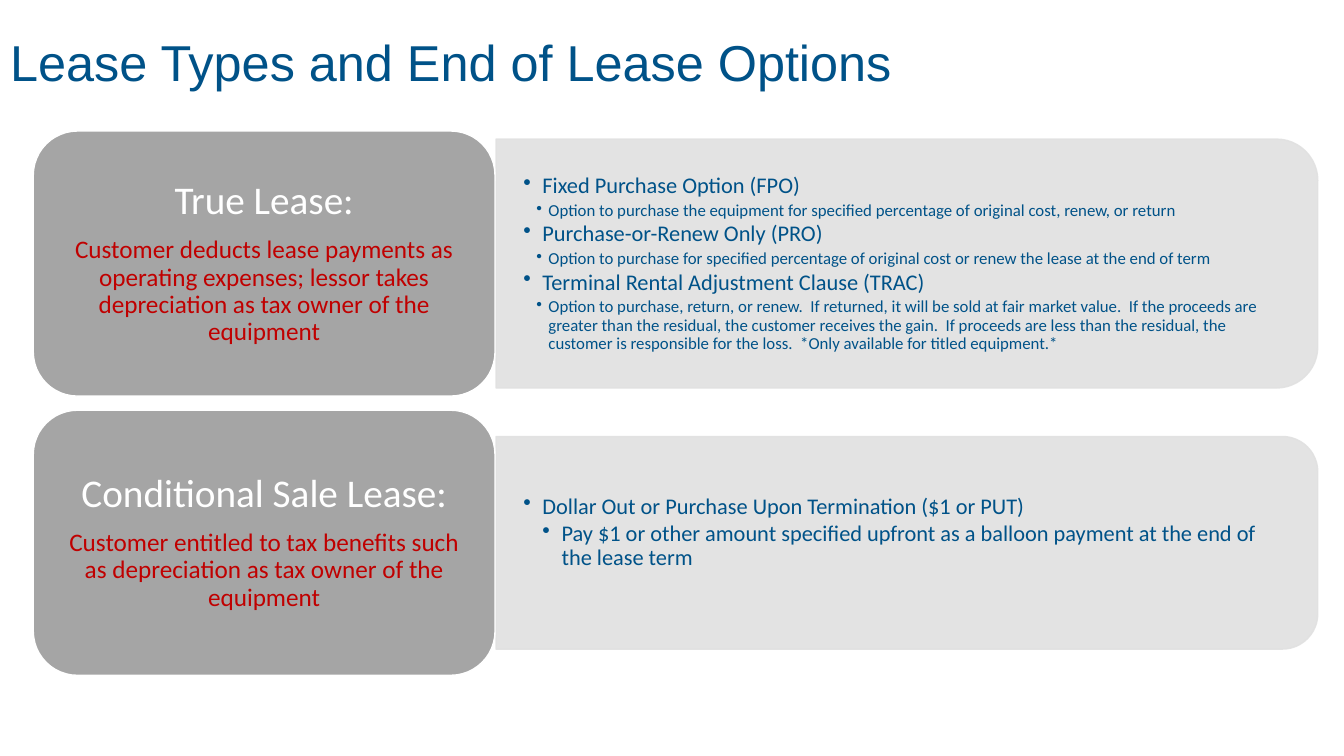
from pptx import Presentation
from pptx.dml.color import RGBColor
from pptx.enum.shapes import MSO_SHAPE
from pptx.enum.text import MSO_ANCHOR, MSO_AUTO_SIZE, PP_ALIGN
from pptx.oxml.ns import qn
from pptx.util import Inches, Pt
from lxml.etree import SubElement

NAVY, RED, WHITE = "005288", "C00000", "FFFFFF"
CARD_GRAY, PANEL_GRAY = "A5A5A5", "E1E1E1"
CARD_LEFT, CARD_WIDTH, CARD_HEIGHT = 0.33, 4.58, 2.63
PANEL_LEFT, PANEL_WIDTH = 4.92, 8.15

LEASES = [
    {"name": "True Lease:",
     "summary": "Customer deducts lease payments as operating expenses; lessor takes "
                "depreciation as tax owner of the equipment",
     "card_top": 1.3, "panel_top": 1.38, "panel_height": 2.47, "bottom_inset": 0.14,
     # text, level, size, indent, hanging
     "options": [
         ("Fixed Purchase Option (FPO)", 1, 16, 0.19, 0.19),
         ("Option to purchase the equipment for specified percentage of original cost, "
          "renew, or return", 2, 12, 0.25, 0.12),
         ("Purchase-or-Renew Only (PRO)", 1, 16, 0.19, 0.19),
         ("Option to purchase for specified percentage of original cost or renew the lease "
          "at the end of term", 2, 12, 0.25, 0.12),
         ("Terminal Rental Adjustment Clause (TRAC)", 1, 16, 0.19, 0.19),
         ("Option to purchase, return, or renew.  If returned, it will be sold at fair market "
          "value.  If the proceeds are greater than the residual, the customer receives the "
          "gain.  If proceeds are less than the residual, the customer is responsible for the "
          "loss.  *Only available for titled equipment.*", 2, 12, 0.25, 0.12),
     ]},
    {"name": "Conditional Sale Lease:",
     "summary": "Customer entitled to tax benefits such as depreciation as tax owner "
                "of the equipment",
     "card_top": 4.07, "panel_top": 4.33, "panel_height": 2.11, "bottom_inset": 0.34,
     "options": [
         ("Dollar Out or Purchase Upon Termination ($1 or PUT)", 1, 16, 0.19, 0.19),
         ("Pay $1 or other amount specified upfront as a balloon payment at the end of the "
          "lease term", 2, 16, 0.38, 0.19),
     ]},
]


def paint(shape, fill, line):
    shape.shadow.inherit = False
    shape.fill.solid()
    shape.fill.fore_color.rgb = RGBColor.from_string(fill)
    shape.line.color.rgb = RGBColor.from_string(line)
    shape.line.width = Pt(1)


def write(frame, text, size, color, font="Calibri", align=PP_ALIGN.LEFT,
          after=0, level=0, indent=0, hanging=0):
    """Add a paragraph to the frame; a hanging indent gives it a bullet."""
    first = frame.paragraphs[0]
    para = frame.add_paragraph() if first.runs else first
    para.alignment = align
    para.level = level
    para.line_spacing = 0.9
    para.space_before = Pt(0)
    para.space_after = Pt(after * size)
    if hanging:
        properties = para._p.get_or_add_pPr()
        properties.set("marL", str(Inches(indent)))
        properties.set("indent", str(-Inches(hanging)))
        SubElement(properties, qn("a:buChar"), char="•")
    span = para.add_run()
    span.text = text
    span.font.name = font
    span.font.size = Pt(size)
    span.font.color.rgb = RGBColor.from_string(color)


deck = Presentation()
deck.slide_width, deck.slide_height = Inches(13.33), Inches(7.5)
page = deck.slides.add_slide(deck.slide_layouts[5])

title = page.shapes.title
title.left, title.top = Inches(0), Inches(0.3)
title.width, title.height = Inches(12.67), Inches(0.7)
title.text_frame.auto_size = MSO_AUTO_SIZE.NONE
title.text_frame.vertical_anchor = MSO_ANCHOR.MIDDLE
write(title.text_frame, "Lease Types and End of Lease Options", 36, NAVY, font="Arial")

for lease in LEASES:
    # The panel is turned a quarter so that its rounded corners face right
    height = lease["panel_height"]
    center_x = PANEL_LEFT + PANEL_WIDTH / 2
    center_y = lease["panel_top"] + height / 2
    panel = page.shapes.add_shape(
        MSO_SHAPE.ROUND_2_SAME_RECTANGLE,
        Inches(center_x - height / 2), Inches(center_y - PANEL_WIDTH / 2),
        Inches(height), Inches(PANEL_WIDTH))
    panel.rotation = 90
    paint(panel, PANEL_GRAY, PANEL_GRAY)
    for color in panel._element.spPr.iter(qn("a:srgbClr")):
        SubElement(color, qn("a:alpha"), val="90000")

    box = page.shapes.add_textbox(Inches(PANEL_LEFT), Inches(lease["panel_top"] + 0.11),
                                  Inches(8.04), Inches(height - 0.22))
    frame = box.text_frame
    frame.word_wrap = True
    frame.vertical_anchor = MSO_ANCHOR.MIDDLE
    frame.margin_left = frame.margin_right = Inches(0.27)
    frame.margin_top = Inches(0.14)
    frame.margin_bottom = Inches(lease["bottom_inset"])
    for text, level, size, indent, hanging in lease["options"]:
        write(frame, text, size, NAVY, after=0.15, level=level,
              indent=indent, hanging=hanging)

    card = page.shapes.add_shape(
        MSO_SHAPE.ROUNDED_RECTANGLE, Inches(CARD_LEFT), Inches(lease["card_top"]),
        Inches(CARD_WIDTH), Inches(CARD_HEIGHT))
    paint(card, CARD_GRAY, WHITE)
    frame = card.text_frame
    frame.word_wrap = True
    frame.vertical_anchor = MSO_ANCHOR.MIDDLE
    frame.margin_left = frame.margin_right = Inches(0.12)
    frame.margin_top = frame.margin_bottom = Inches(0.06)
    write(frame, lease["name"], 28, WHITE, align=PP_ALIGN.CENTER, after=0.35)
    write(frame, lease["summary"], 18, RED, align=PP_ALIGN.CENTER, after=0.35)

deck.save("out.pptx")
